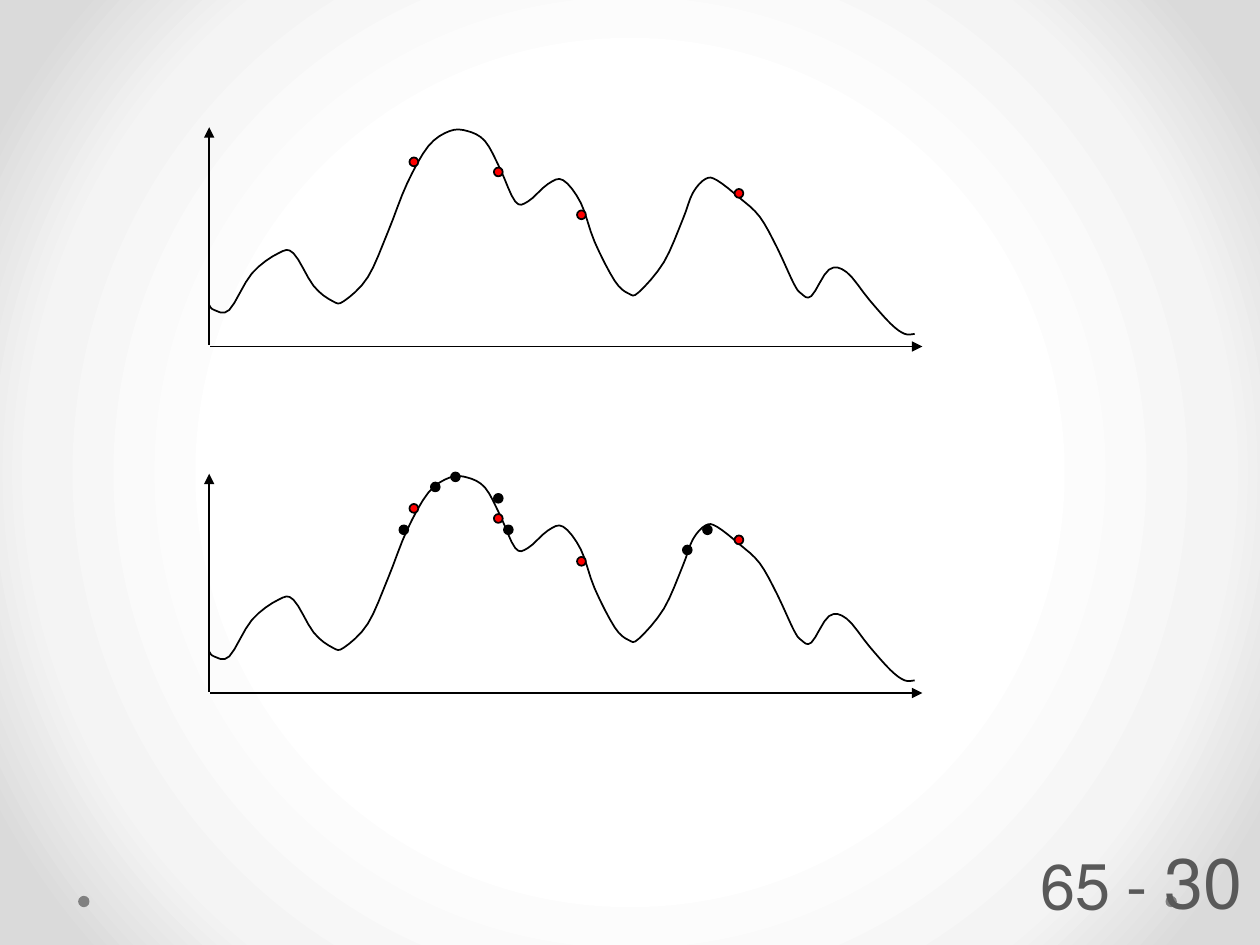
"""Build a slide with two fitness landscapes, before and after new candidates are sampled."""
from dataclasses import dataclass

from lxml import etree
from pptx import Presentation
from pptx import util as u
from pptx.dml.color import RGBColor
from pptx.enum import shapes, text
from pptx.oxml import parse_xml
from pptx.oxml.ns import qn

COLORS = {"ink": "000000", "sample": "FF0000", "ornament": "808080", "number": "595959"}
BACKDROP = {50: "FFFFFF", 76: "F4F4F4", 92: "DADADA"}
FONT = "TeX Gyre Adventor"
DOT = 0.07
STEPS = 4
KNOTS = [
    (1.66, 2.42), (1.7, 2.46), (1.82, 2.46), (2, 2.17), (2.21, 2.01), (2.33, 2.01),
    (2.49, 2.27), (2.64, 2.39), (2.73, 2.39), (2.92, 2.2), (3.08, 1.84), (3.23, 1.46),
    (3.4, 1.16), (3.57, 1.04), (3.71, 1.04), (3.85, 1.12), (3.97, 1.34), (4.09, 1.6),
    (4.19, 1.6), (4.35, 1.46), (4.47, 1.43), (4.61, 1.61), (4.72, 1.92), (4.88, 2.23),
    (4.99, 2.33), (5.07, 2.32), (5.27, 2.08), (5.42, 1.74), (5.5, 1.53), (5.6, 1.42),
    (5.69, 1.43), (5.87, 1.57), (6.03, 1.72), (6.17, 1.97), (6.3, 2.25), (6.36, 2.33),
    (6.44, 2.35), (6.58, 2.14), (6.72, 2.16), (6.9, 2.38), (7.07, 2.57), (7.18, 2.65),
    (7.26, 2.65),
]
SAMPLES = [(3.92, 1.33), (3.25, 1.25), (4.58, 1.67), (5.83, 1.5)]
NEIGHBOURS = [(3.42, 1.08), (3.58, 1), (5.58, 1.42), (5.42, 1.58), (3.17, 1.42), (3.92, 1.17), (4, 1.42)]


@dataclass
class Landscape:
    """A plot, its downward shift and the points added to the samples."""
    shift: float
    neighbours: list[tuple[float, float]]


@dataclass
class Label:
    """A right-to-left label, its box and its format."""
    words: str
    box: tuple[float, float, float, float]
    size: int
    frame_format: dict
    alignment: text.PP_ALIGN | None = None


LANDSCAPES = [Landscape(2.75, NEIGHBOURS), Landscape(0, [])]
LABELS = [
    Label("30", (9.21, 6.73, 0.88, 0.52), 40,
          {"vertical_anchor": text.MSO_ANCHOR.MIDDLE, "margin_left": u.Cm(0.08), "margin_right": u.Cm(0.13)}),
    Label(" - 65", (7, 6.67, 2.33, 0.71), 36,
          {"auto_size": text.MSO_AUTO_SIZE.SHAPE_TO_FIT_TEXT}, text.PP_ALIGN.RIGHT),
]


def length(inches: float) -> u.Length:
    """Convert inches to a length given in centimetres."""
    return u.Cm(inches * 2.54)


def color(name: str) -> RGBColor:
    """Look up a colour by its role."""
    return RGBColor.from_string(COLORS[name])


def ink(line) -> None:
    """Give a line the common stroke."""
    line.color.rgb = color("ink")
    line.width = u.Pt(1)


def blend(before: float, start: float, end: float, after: float, t: float) -> float:
    """Interpolate between start and end with a Catmull-Rom spline."""
    bend = 2 * before - 5 * start + 4 * end - after
    twist = 3 * (start - end) + after - before
    return start + t * (end - before + t * (bend + t * twist)) / 2


def smooth_curve(knots: list[tuple[float, float]]) -> list[tuple[float, float]]:
    """Return points on a smooth curve through the knots."""
    padded = [knots[0], *knots, knots[-1]]
    points = [tuple(blend(*values, step / STEPS) for values in zip(*window))
              for window in zip(padded, padded[1:], padded[2:], padded[3:])
              for step in range(STEPS)]
    return [*points, knots[-1]]


def draw_backdrop(slide) -> None:
    """Fill the slide background with a radial gradient."""
    stops = "".join(f'<a:gs pos="{position * 1000}"><a:srgbClr val="{value}"/></a:gs>'
                    for position, value in BACKDROP.items())
    slide.background.fill.solid()
    properties = slide.element.cSld.find(qn("p:bg")).find(qn("p:bgPr"))
    properties.replace(properties[0], parse_xml(
        '<a:gradFill xmlns:a="http://schemas.openxmlformats.org/drawingml/2006/main" rotWithShape="1">'
        f'<a:gsLst>{stops}</a:gsLst><a:path path="circle">'
        '<a:fillToRect l="50000" t="50000" r="50000" b="50000"/></a:path></a:gradFill>'))


def draw_dot(slide, left: float, top: float, fill: str, size: float = DOT, outlined: bool = True) -> None:
    """Draw a round dot."""
    dot = slide.shapes.add_shape(shapes.MSO_SHAPE.OVAL, *map(length, (left, top, size, size)))
    dot.shadow.inherit = False
    dot.fill.solid()
    dot.fill.fore_color.rgb = color(fill)
    if outlined:
        ink(dot.line)
    else:
        dot.line.fill.background()


def draw_axis(slide, start: tuple[float, float], end: tuple[float, float], arrow_end: str) -> None:
    """Draw an axis with an arrowhead at the named end."""
    axis = slide.shapes.add_connector(shapes.MSO_CONNECTOR.STRAIGHT, *map(length, (*start, *end)))
    ink(axis.line)
    properties = axis.element.spPr
    etree.SubElement(properties.find(qn("a:ln")), qn(arrow_end), type="triangle")
    etree.SubElement(properties, qn("a:effectLst"))


def draw_landscape(slide, landscape: Landscape) -> None:
    """Draw the axes, the curve and the dots of a plot."""
    shift = landscape.shift
    draw_axis(slide, (1.66, 1.01 + shift), (1.66, 2.74 + shift), "a:headEnd")
    draw_axis(slide, (1.67, 2.75 + shift), (7.32, 2.75 + shift), "a:tailEnd")
    points = [(length(x), length(y + shift)) for x, y in smooth_curve(KNOTS)]
    builder = slide.shapes.build_freeform(*points[0])
    builder.add_line_segments(points[1:], close=False)
    curve = builder.convert_to_shape()
    curve.shadow.inherit = False
    curve.fill.background()
    ink(curve.line)
    for fill, dots in (("sample", SAMPLES), ("ink", landscape.neighbours)):
        for left, top in dots:
            draw_dot(slide, left, top + shift, fill)


def draw_label(slide, label: Label) -> None:
    """Write a right-to-left label."""
    frame = slide.shapes.add_textbox(*map(length, label.box)).text_frame
    for name, value in {"word_wrap": True, **label.frame_format}.items():
        setattr(frame, name, value)
    paragraph = frame.paragraphs[0]
    paragraph.alignment = label.alignment
    paragraph._p.get_or_add_pPr().set("rtl", "1")
    run = paragraph.add_run()
    run.text = label.words
    for name, value in {"name": FONT, "size": u.Pt(label.size)}.items():
        setattr(run.font, name, value)
    run.font.color.rgb = color("number")


def main() -> None:
    """Build and save the presentation."""
    presentation = Presentation()
    presentation.slide_width, presentation.slide_height = u.Cm(25.4), u.Cm(19.05)
    slide = presentation.slides.add_slide(presentation.slide_layouts[6])
    draw_backdrop(slide)
    for left in (9.25, 0.62):
        draw_dot(slide, left, 7.11, "ornament", 0.09, outlined=False)
    for landscape in LANDSCAPES:
        draw_landscape(slide, landscape)
    for label in LABELS:
        draw_label(slide, label)
    presentation.save("out.pptx")


if __name__ == "__main__":
    main()
